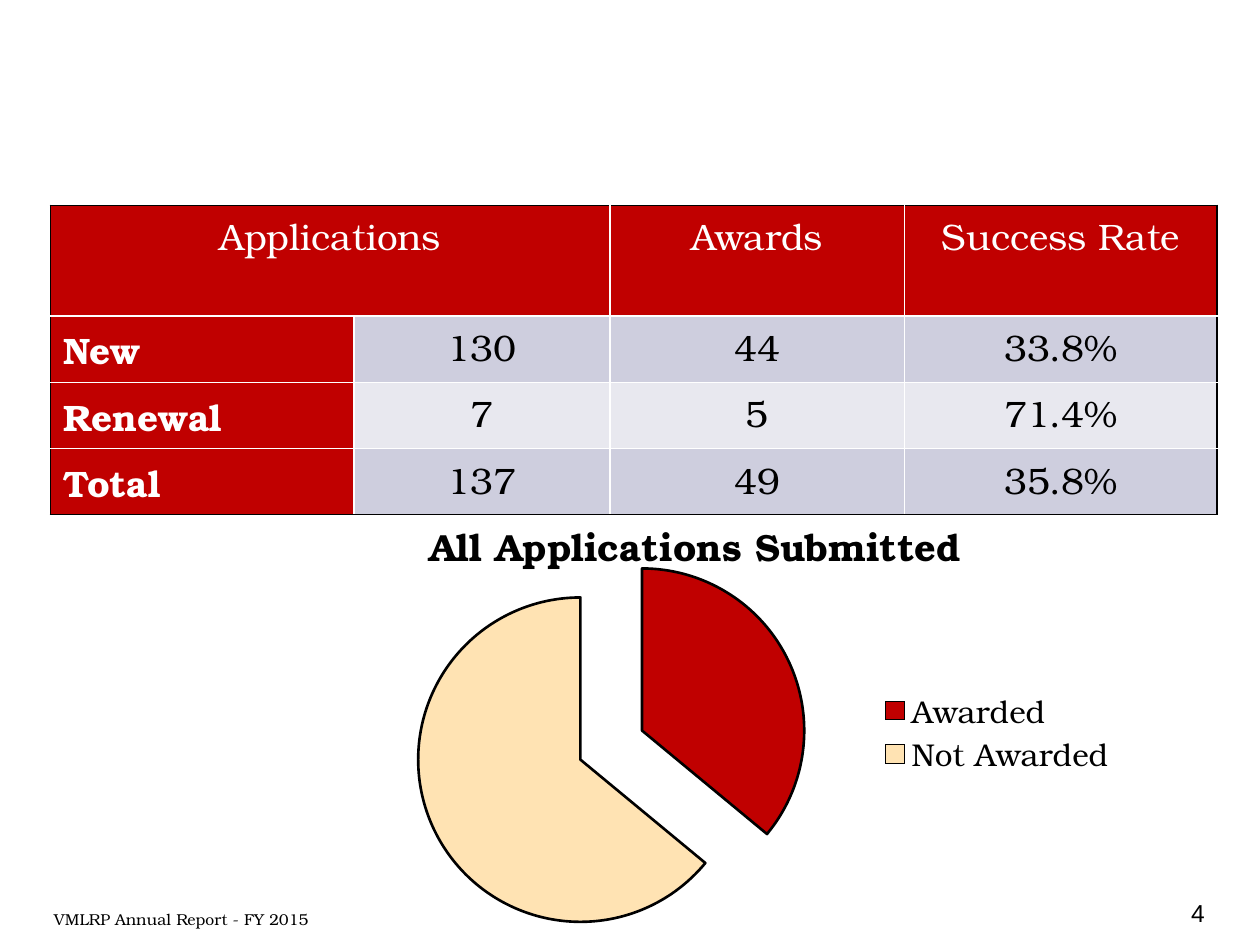
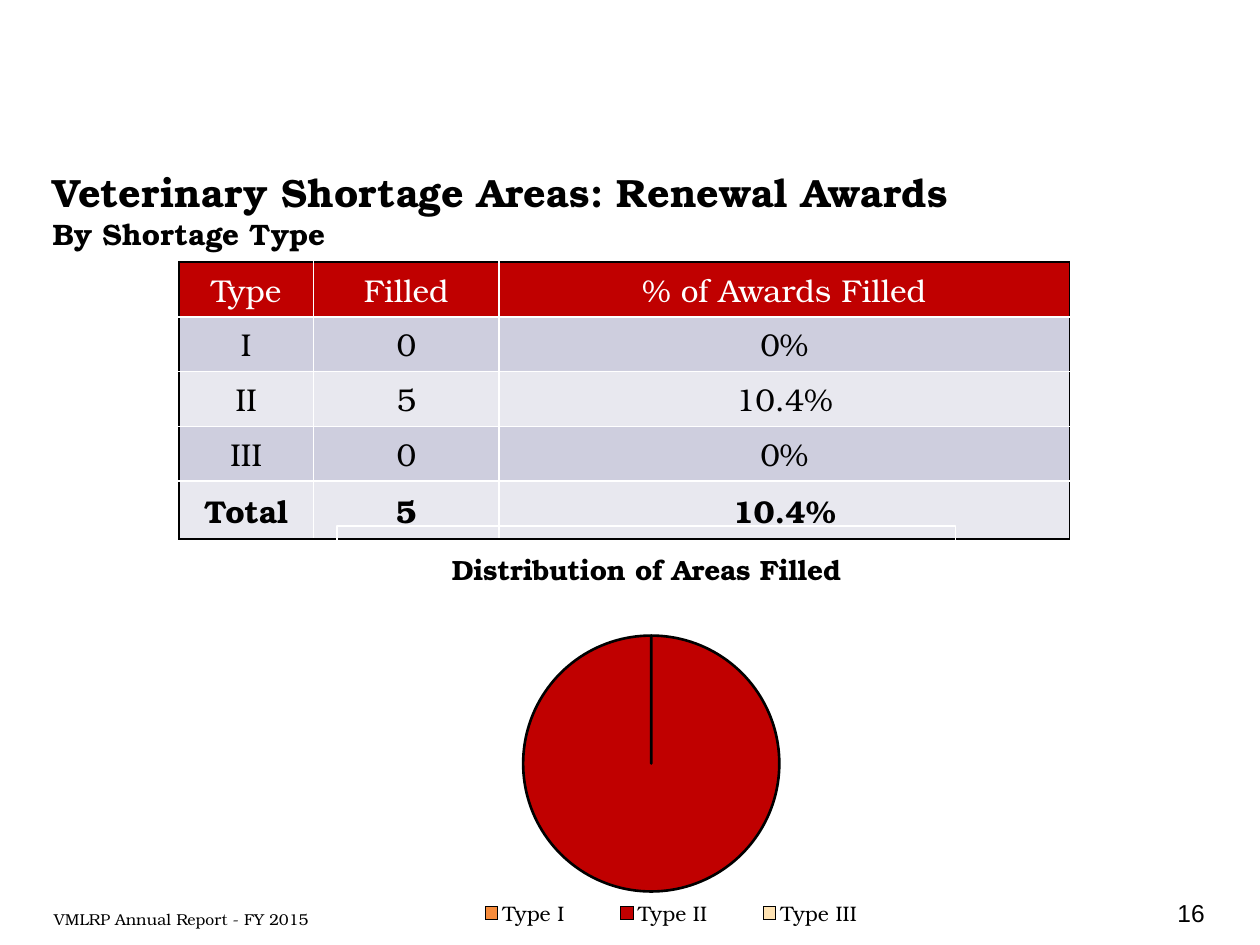
from lxml import etree
from pptx import Presentation
from pptx.chart.data import CategoryChartData
from pptx.dml.color import RGBColor
from pptx.enum.chart import XL_CHART_TYPE, XL_LEGEND_POSITION as LEGEND
from pptx.enum.text import MSO_ANCHOR as ANCHOR, PP_ALIGN as ALIGN
from pptx.oxml import parse_xml
from pptx.oxml.ns import nsdecls, qn
from pptx.util import Inches, Pt

BLACK = RGBColor(0x00, 0x00, 0x00)
WHITE = RGBColor(0xFF, 0xFF, 0xFF)
RED = RGBColor(0xC0, 0x00, 0x00)
ORANGE = RGBColor(0xF7, 0x8C, 0x3C)
CREAM = RGBColor(0xFF, 0xE3, 0xB3)
BANDS = [RGBColor(0xCE, 0xCE, 0xDE), RGBColor(0xE8, 0xE8, 0xEF)]
SERIF, SANS = "TeX Gyre Bonum", "Arial"

REPORTS = [
    dict(
        page="4", heading=None,
        rows=[["Applications", "", "Awards", "Success Rate"],
              ["New", "130", "44", "33.8%"],
              ["Renewal", "7", "5", "71.4%"],
              ["Total", "137", "49", "35.8%"]],
        table_at=(0.4, 1.63), widths=[2.41, 2.03, 2.34, 2.48],
        heights=[0.88] + [0.525] * 3, table_size=21,
        row_labels=True, header_anchor=ANCHOR.TOP,
        chart_at=(1.76, 3.75, 7.24, 3.89), chart_border=False,
        chart_title="All Applications Submitted", title_size=21.6,
        title_layout=dict(x=0.22, y=0.07),
        plot_layout=dict(x=0.103, y=0.156, w=0.648, h=0.801),
        legend=LEGEND.RIGHT, legend_size=18,
        legend_layout=dict(x=0.72, y=0.44, w=0.26, h=0.18),
        shares={"Awarded": (36, RED), "Not Awarded": (64, CREAM)}, explosion=21,
    ),
    dict(
        page="16",
        heading="Veterinary Shortage Areas: Renewal Awards\vBy Shortage Type",
        rows=[["Type", "Filled", "% of Awards Filled"],
              ["I", "0", "0%"],
              ["II", "5", "10.4%"],
              ["III", "0", "0%"],
              ["Total", "5", "10.4%"]],
        table_at=(1.42, 2.08), widths=[1.07, 1.47, 4.53],
        heights=[0.435] * 4 + [0.46], table_size=18,
        row_labels=False, header_anchor=ANCHOR.MIDDLE,
        chart_at=(2.67, 4.17, 4.92, 3.33), chart_border=True,
        chart_title="Distribution of Areas Filled", title_size=16,
        title_layout=None,
        plot_layout=dict(x=0.017, y=0.164, w=0.982, h=0.71),
        legend=LEGEND.BOTTOM, legend_size=12,
        legend_layout=dict(x=0.16, y=0.88, w=0.76, h=0.09),
        shares={"Type I": (0, ORANGE), "Type II": (100, RED), "Type III": (0, CREAM)},
        explosion=16,
    ),
]


def add_text(slide, at, text, sizes, font=SERIF, bold=False, align=ALIGN.LEFT):
    frame = slide.shapes.add_textbox(*map(Inches, at)).text_frame
    frame.word_wrap = True
    paragraph = frame.paragraphs[0]
    paragraph.text = text
    paragraph.alignment = align
    for run, size in zip(paragraph.runs, sizes):
        run.font.name, run.font.size, run.font.bold = font, Pt(size), bold
        run.font.color.rgb = BLACK
    return frame


def set_layout(element, before, layout, inner=False):
    """Place a chart part by fractions of the chart area."""
    for old in element.findall(qn("c:layout")):
        element.remove(old)
    target = '<c:layoutTarget val="inner"/>' if inner else ""
    modes = "".join(f'<c:{key}Mode val="edge"/>' for key in "xy")
    values = "".join(f'<c:{key} val="{value}"/>' for key, value in layout.items())
    xml = (f'<c:layout {nsdecls("c")}><c:manualLayout>{target}{modes}{values}'
           '</c:manualLayout></c:layout>')
    element.insert(before, parse_xml(xml))


prs = Presentation()
prs.slide_width, prs.slide_height = Inches(10), Inches(7.5)

for report in REPORTS:
    slide = prs.slides.add_slide(prs.slide_layouts[6])

    # Footer and heading
    add_text(slide, (0.33, 7.17, 2.42, 0.5), "VMLRP Annual Report - FY 2015", [9])
    if report["heading"]:
        heading = add_text(slide, (0.32, 1.25, 9.27, 0.83), report["heading"],
                           [22.5, 16.9], bold=True)
        heading.vertical_anchor = ANCHOR.MIDDLE

    # Awards table
    rows, widths, heights = report["rows"], report["widths"], report["heights"]
    last_row, last_col = len(rows) - 1, len(widths) - 1
    left, top = report["table_at"]
    table = slide.shapes.add_table(
        len(rows), len(widths), Inches(left), Inches(top),
        Inches(sum(widths)), Inches(sum(heights))).table
    for column, width in zip(table.columns, widths):
        column.width = Inches(width)
    for row, height in zip(table.rows, heights):
        row.height = Inches(height)
    for r, values in enumerate(rows):
        for c, value in enumerate(values):
            cell = table.cell(r, c)
            is_label = report["row_labels"] and r > 0 and c == 0
            is_red = r == 0 or is_label
            is_total = r == last_row and not report["row_labels"]
            cell.fill.solid()
            cell.fill.fore_color.rgb = RED if is_red else BANDS[(r - 1) % 2]
            cell.vertical_anchor = report["header_anchor"] if r == 0 else ANCHOR.TOP
            paragraph = cell.text_frame.paragraphs[0]
            paragraph.text = value
            paragraph.alignment = ALIGN.LEFT if is_label else ALIGN.CENTER
            font = paragraph.font
            for font in [run.font for run in paragraph.runs] or [paragraph.font]:
                font.name, font.size = SERIF, Pt(report["table_size"])
                font.bold = is_label or is_total
                font.color.rgb = WHITE if is_red else BLACK
            # Black outer edge, white inner grid
            outer = {"L": c == 0, "R": c == last_col, "T": r == 0, "B": r == last_row}
            for i, (side, is_outer) in enumerate(outer.items()):
                cell._tc.get_or_add_tcPr().insert(i, parse_xml(
                    f'<a:ln{side} {nsdecls("a")} w="{Pt(1)}"><a:solidFill><a:srgbClr '
                    f'val="{BLACK if is_outer else WHITE}"/></a:solidFill></a:ln{side}>'))
    if report["row_labels"]:
        table.cell(0, 0).merge(table.cell(0, 1))

    # Page number
    add_text(slide, (7.58, 7.08, 2.08, 0.5), report["page"], [14], SANS,
             align=ALIGN.RIGHT)

    # Pie chart
    shares = report["shares"]
    data = CategoryChartData()
    data.categories = list(shares)
    data.add_series("Series 1", [share for share, _ in shares.values()])
    chart = slide.shapes.add_chart(
        XL_CHART_TYPE.PIE, *map(Inches, report["chart_at"]), data).chart
    chart.font.name, chart.font.size = SERIF, Pt(18)
    chart.font.color.rgb = BLACK

    chart.has_title = True
    chart.chart_title.text_frame.text = report["chart_title"]
    title_font = chart.chart_title.text_frame.paragraphs[0].runs[0].font
    title_font.name, title_font.size = SERIF, Pt(report["title_size"])
    title_font.bold = True
    title_font.color.rgb = BLACK
    if report["title_layout"]:
        set_layout(chart.chart_title._element, 1, report["title_layout"])

    chart.has_legend = True
    chart.legend.position = report["legend"]
    chart.legend.include_in_layout = False
    chart.legend.font.name = SERIF
    chart.legend.font.size = Pt(report["legend_size"])
    chart.legend.font.color.rgb = BLACK
    set_layout(chart.legend._element, 1, report["legend_layout"])

    # Slices
    plot = chart.plots[0]
    plot.vary_by_categories = True
    set_layout(chart._chartSpace.chart.plotArea, 0, report["plot_layout"], inner=True)
    pie = plot.series[0]
    pie.format.line.color.rgb = BLACK
    pie.format.line.width = Pt(1.5)
    for i, (_, color) in enumerate(shares.values()):
        slice_format = pie.points[i].format
        slice_format.fill.solid()
        slice_format.fill.fore_color.rgb = color
        slice_format.line.color.rgb = BLACK
        slice_format.line.width = Pt(1.5)
    explosion = etree.Element(qn("c:explosion"), val=str(report["explosion"]))
    pie._element.find(qn("c:spPr")).addnext(explosion)

    # Chart frame
    line = (f'<a:ln w="{Pt(0.75)}"><a:solidFill><a:srgbClr val="{WHITE}"/></a:solidFill></a:ln>'
            if report["chart_border"] else "<a:ln><a:noFill/></a:ln>")
    chart._chartSpace.chart.addnext(parse_xml(
        f'<c:spPr {nsdecls("c", "a")}><a:noFill/>{line}</c:spPr>'))

prs.save("out.pptx")
